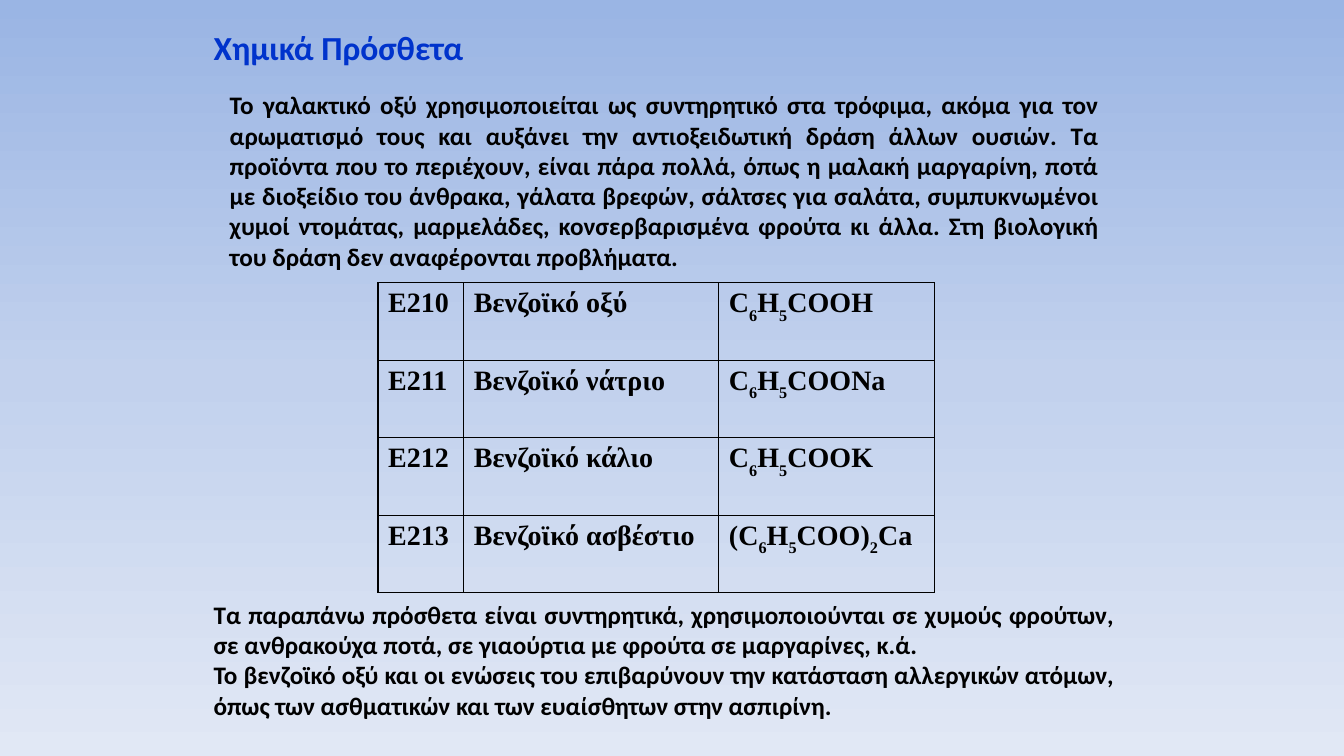
import copy
import itertools

import pptx
import pptx.dml.color
import pptx.enum.text
import pptx.oxml
import pptx.oxml.ns
import pptx.util

COLORS = {
    "title": "0033CC",
    "text": "000000",
    "sky_top": "9AB5E4",
    "sky_middle": "C2D1ED",
    "sky_bottom": "E1E8F5",
}
LACTIC_ACID = (
    "Το γαλακτικό οξύ χρησιμοποιείται ως συντηρητικό στα τρόφιμα, ακόμα για τον "
    "αρωματισμό τους και αυξάνει την αντιοξειδωτική δράση άλλων ουσιών. Τα προϊόντα "
    "που το περιέχουν, είναι πάρα πολλά, όπως η μαλακή μαργαρίνη, ποτά με διοξείδιο "
    "του άνθρακα, γάλατα βρεφών, σάλτσες για σαλάτα, συμπυκνωμένοι χυμοί ντομάτας, "
    "μαρμελάδες, κονσερβαρισμένα φρούτα κι άλλα. Στη βιολογική του δράση δεν "
    "αναφέρονται προβλήματα."
)
ADDITIVES = [
    ("Ε210", "Βενζοϊκό οξύ", "C6H5COOH"),
    ("Ε211", "Βενζοϊκό νάτριο", "C6H5COONa"),
    ("Ε212", "Βενζοϊκό κάλιο", "C6H5COOK"),
    ("Ε213", "Βενζοϊκό ασβέστιο", "(C6H5COO)2Ca"),
]
EFFECTS = [
    "Τα παραπάνω πρόσθετα είναι συντηρητικά, χρησιμοποιούνται σε χυμούς φρούτων, "
    "σε ανθρακούχα ποτά, σε γιαούρτια με φρούτα σε μαργαρίνες, κ.ά.",
    "Το βενζοϊκό οξύ και οι ενώσεις του επιβαρύνουν την κατάσταση αλλεργικών ατόμων, "
    "όπως των ασθματικών και των ευαίσθητων στην ασπιρίνη.",
]


class SlideBuilder:
    """Holds the style and the current slide; lengths are percentages of its size."""

    body_font = "Calibri"
    table_font = "Times New Roman"
    justify = pptx.enum.text.PP_ALIGN.JUSTIFY

    def __init__(self, presentation):
        self.width = presentation.slide_width
        self.height = presentation.slide_height
        self.slide = presentation.slides.add_slide(presentation.slide_layouts[6])

    def across(self, share):
        return round(self.width * share / 100)

    def down(self, share):
        return round(self.height * share / 100)

    def box(self, left, top, width, height):
        return self.across(left), self.down(top), self.across(width), self.down(height)

    def color(self, name):
        return pptx.dml.color.RGBColor.from_string(COLORS[name])

    def background(self, *names):
        fill = self.slide.background.fill
        fill.gradient()
        fill.gradient_angle = 270
        stop_list = self.slide.element.find(".//" + pptx.oxml.ns.qn("a:gsLst"))
        while len(stop_list) < len(names):
            stop_list.append(copy.deepcopy(stop_list[-1]))
        for index, (stop, name) in enumerate(zip(fill.gradient_stops, names)):
            stop.position = index / (len(names) - 1)
            stop.color.rgb = self.color(name)

    def style(self, paragraph, font_name, size, color="text", alignment=None):
        paragraph.alignment = alignment
        font = paragraph.font
        font.name, font.size, font.bold = font_name, pptx.util.Pt(size), True
        font.color.rgb = self.color(color)

    def text(self, texts, area, size=18, color="text", alignment=justify, wrap=True):
        frame = self.slide.shapes.add_textbox(*self.box(*area)).text_frame
        frame.word_wrap = wrap
        frame.auto_size = pptx.enum.text.MSO_AUTO_SIZE.SHAPE_TO_FIT_TEXT
        frame.vertical_anchor = pptx.enum.text.MSO_ANCHOR.MIDDLE
        frame.text = "\n".join(texts)
        for paragraph in frame.paragraphs:
            self.style(paragraph, self.body_font, size, color, alignment)

    def formula(self, paragraph, formula):
        for is_index, symbols in itertools.groupby(formula, str.isdigit):
            run = paragraph.add_run()
            run.text = "".join(symbols)
            if is_index:
                run.font._element.set("baseline", "-30000")

    def borders(self, cell):
        properties = cell._tc.get_or_add_tcPr()
        for index, side in enumerate("LRTB"):
            line = pptx.oxml.parse_xml(
                f'<a:ln{side} {pptx.oxml.ns.nsdecls("a")} w="12700"><a:solidFill>'
                f'<a:srgbClr val="{COLORS["text"]}"/></a:solidFill></a:ln{side}>'
            )
            properties.insert(index, line)

    def table(self, rows, left, top, column_widths, row_height):
        area = self.box(left, top, sum(column_widths), row_height * len(rows))
        table = self.slide.shapes.add_table(len(rows), len(column_widths), *area).table
        table.first_row = table.horz_banding = False
        for column, width in zip(table.columns, column_widths):
            column.width = self.across(width)
        for row, values in zip(table.rows, rows):
            row.height = self.down(row_height)
            for cell, value in zip(row.cells, values):
                cell.fill.background()
                self.borders(cell)
                paragraph = cell.text_frame.paragraphs[0]
                if value == values[-1]:
                    self.formula(paragraph, value)
                else:
                    paragraph.text = value
                self.style(paragraph, self.table_font, 20, alignment=self.justify)


def main():
    presentation = pptx.Presentation()
    presentation.slide_width = pptx.util.Inches(13.33)
    presentation.slide_height = pptx.util.Inches(7.5)

    builder = SlideBuilder(presentation)
    builder.background("sky_top", "sky_middle", "sky_bottom")
    builder.text(["Χημικά Πρόσθετα"], (15.15, 2.93, 20.85, 6.67),
                 size=24, color="title", alignment=None, wrap=False)
    builder.text([LACTIC_ACID], (16.35, 11.2, 66.15, 25.33))
    builder.table(ADDITIVES, 28.13, 37.4, (6.38, 18.98, 16.05), 10.25)
    builder.text(EFFECTS, (15.15, 78.53, 68.5, 17.47))

    presentation.save("out.pptx")


if __name__ == "__main__":
    main()
